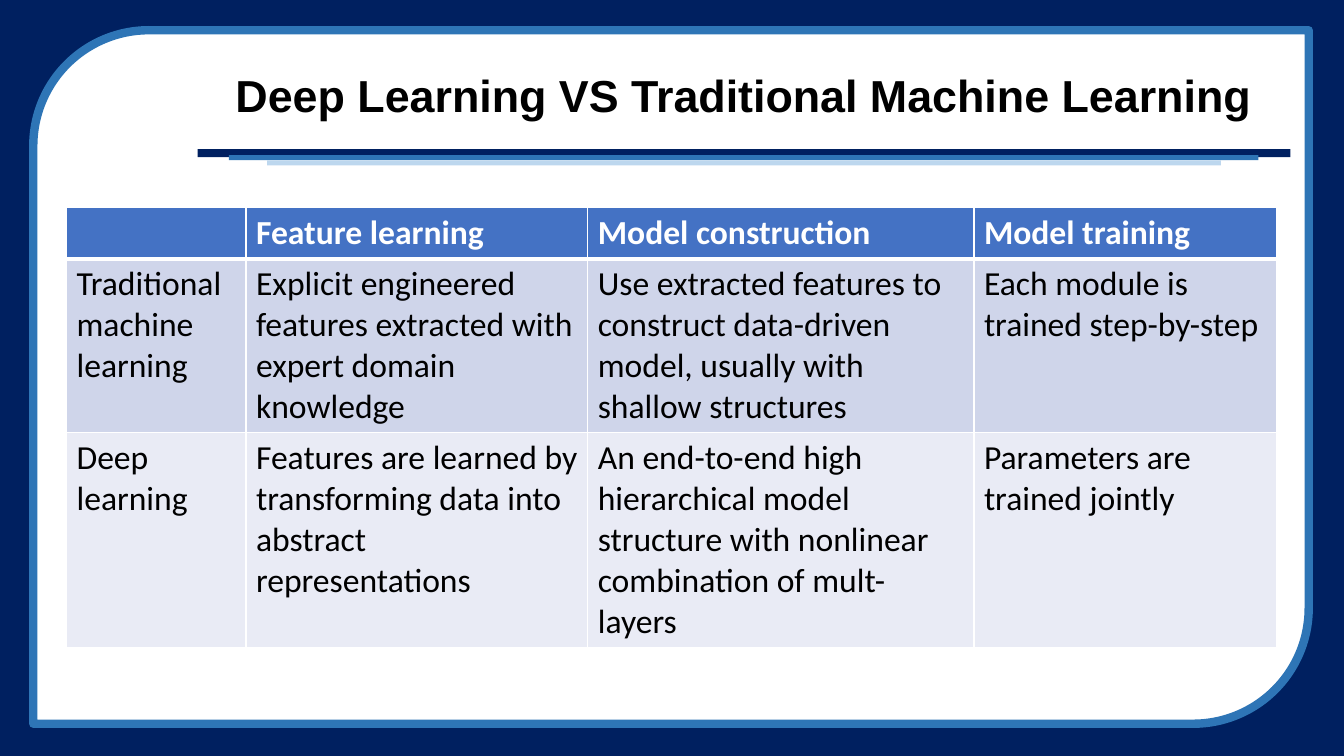
import pptx
import pptx.util
import pptx.dml.color
import pptx.enum.shapes
import pptx.enum.text
import pptx.oxml
import pptx.oxml.ns

Inches, Pt = pptx.util.Inches, pptx.util.Pt
Shape = pptx.enum.shapes.MSO_SHAPE


def paint(fill, color):
    fill.solid()
    fill.fore_color.rgb = pptx.dml.color.RGBColor.from_string(color)


def block(kind, left, top, width, height, color):
    shape = slide.shapes.add_shape(
        kind, Inches(left), Inches(top), Inches(width), Inches(height))
    shape.shadow.inherit = False
    paint(shape.fill, color)
    shape.line.fill.background()
    return shape


deck = pptx.Presentation()
deck.slide_width, deck.slide_height = Inches(13.33), Inches(7.5)
slide = deck.slides.add_slide(deck.slide_layouts[5])
title = slide.shapes.title

# Navy backdrop and white panel
block(Shape.RECTANGLE, 0, 0, 13.33, 7.5, "002060")
panel = block(Shape.ROUND_2_DIAG_RECTANGLE, 0.33, 0.3, 12.65, 6.88, "FFFFFF")
paint(panel.line.fill, "2E75B6")
panel.line.width = Pt(6)

# Stepped rule under the title
for left, top, width, height, color in [
        (1.96, 1.48, 10.84, 0.08, "002060"),
        (2.27, 1.54, 10.21, 0.05, "2E75B6"),
        (2.65, 1.59, 9.46, 0.05, "BDD7EE")]:
    block(Shape.RECTANGLE, left, top, width, height, color)

# Title, brought in front of the panel
slide.shapes._spTree.append(title._element)
title.left, title.top = Inches(1.96), Inches(0.49)
title.width, title.height = Inches(10.84), Inches(0.97)
title.text_frame.vertical_anchor = pptx.enum.text.MSO_ANCHOR.MIDDLE
head = title.text_frame.paragraphs[0]
head.alignment = pptx.enum.text.PP_ALIGN.CENTER
head.line_spacing = 0.9
run = head.add_run()
run.text = "Deep Learning VS Traditional Machine Learning"
run.font.name, run.font.size, run.font.bold = "Arial", Pt(32), True
paint(run.font.fill, "000000")

# Comparison table
rows = [
    ["", "Feature learning", "Model construction", "Model training"],
    ["Traditional machine learning",
     "Explicit engineered features extracted with expert domain knowledge",
     "Use extracted features to construct data-driven model, "
     "usually with shallow structures",
     "Each module is trained step-by-step"],
    ["Deep learning",
     "Features are learned by transforming data into abstract representations",
     "An end-to-end high hierarchical model structure with nonlinear "
     "combination of mult-layers",
     "Parameters are trained jointly"],
]
widths = [1.78, 3.39, 3.83, 3]
heights = [0.5, 1.7, 2.1]
fills = ["4472C4", "CFD5EA", "E9EBF5"]

table = slide.shapes.add_table(
    len(rows), len(widths), Inches(0.66), Inches(2.06),
    Inches(sum(widths)), Inches(sum(heights))).table
table.horz_banding = False
for col, width in zip(table.columns, widths):
    col.width = Inches(width)
for row, height in zip(table.rows, heights):
    row.height = Inches(height)

for r, texts in enumerate(rows):
    for c, text in enumerate(texts):
        cell = table.cell(r, c)
        # White borders, thicker between header and body
        props = cell._tc.get_or_add_tcPr()
        for side in "LRTB":
            thick = (r, side) in [(0, "B"), (1, "T")]
            props.append(pptx.oxml.parse_xml(
                f'<a:ln{side} {pptx.oxml.ns.nsdecls("a")} '
                f'w="{Pt(3 if thick else 1)}"><a:solidFill>'
                f'<a:srgbClr val="FFFFFF"/></a:solidFill></a:ln{side}>'))
        paint(cell.fill, fills[r])
        para = cell.text_frame.paragraphs[0]
        para.font.size = Pt(24)
        if text:
            run = para.add_run()
            run.text = text
            run.font.name, run.font.size = "Calibri", Pt(24)
            run.font.bold = r == 0
            paint(run.font.fill, "FFFFFF" if r == 0 else "000000")

deck.save("out.pptx")
